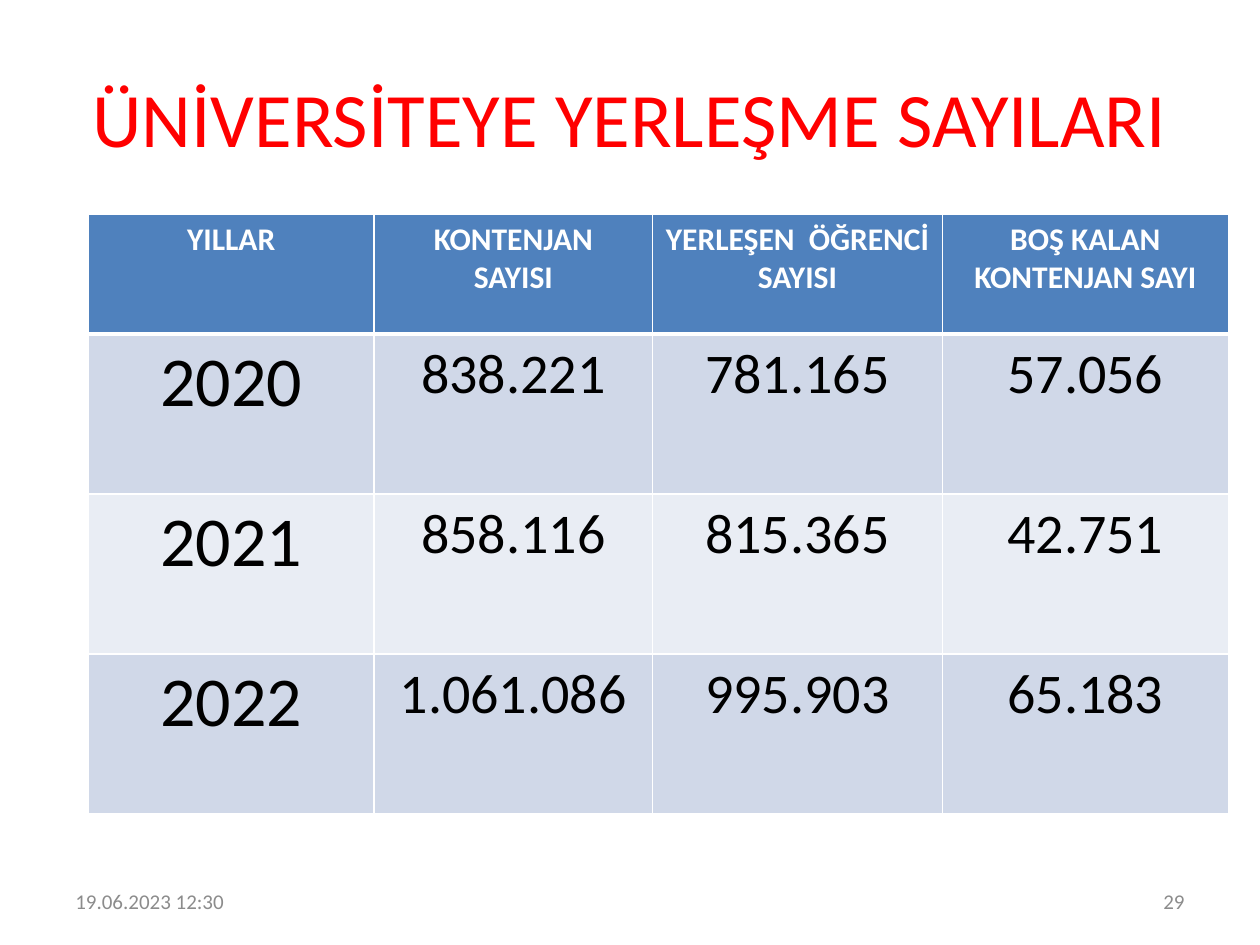
import pptx
import pptx.util
import pptx.dml.color
import pptx.enum.text
import pptx.oxml
import pptx.oxml.ns

Inch = pptx.util.Inches
Align = pptx.enum.text.PP_ALIGN
Anchor = pptx.enum.text.MSO_ANCHOR

WIDE, HIGH = 10, 7.5
FONT = "Calibri"
HUES = {
    "title": "FF0000",
    "head": "4F81BD",
    "odd": "D0D8E8",
    "even": "E9EDF4",
    "line": "FFFFFF",
    "light": "FFFFFF",
    "dark": "000000",
    "foot": "8C8C8C",
}
COLS = [2.27, 2.21, 2.3, 2.27]
ROWS = [0.95, 1.27, 1.27, 1.27]
DATA = [
    ["YILLAR", "KONTENJAN\nSAYISI", "YERLEŞEN  ÖĞRENCİ SAYISI", "BOŞ KALAN KONTENJAN SAYI"],
    ["2020", "838.221", "781.165", "57.056"],
    ["2021", "858.116", "815.365", "42.751"],
    ["2022", "1.061.086", "995.903", "65.183"],
]


def color(name):
    return pptx.dml.color.RGBColor.from_string(HUES[name])


def style(frame, size, hue, align, bold=False):
    for para in frame.paragraphs:
        para.alignment = align
        for run in para.runs:
            run.font.name = FONT
            run.font.size = pptx.util.Pt(size)
            run.font.bold = bold
            run.font.color.rgb = color(hue)


def label(slide, box, text, size, hue, align):
    frame = slide.shapes.add_textbox(*map(Inch, box)).text_frame
    frame.word_wrap = True
    frame.vertical_anchor = Anchor.MIDDLE
    frame.text = text
    style(frame, size, hue, align)


def border(cell, side, width):
    props = cell._tc.get_or_add_tcPr()
    line = pptx.oxml.parse_xml(
        f'<a:{side} {pptx.oxml.ns.nsdecls("a")} w="{pptx.util.Pt(width)}">'
        f'<a:solidFill><a:srgbClr val="{HUES["line"]}"/></a:solidFill></a:{side}>'
    )
    props.append(line)


def paint(cell, text, row, col):
    head = row == 0
    cell.text_frame.text = text
    if head:
        style(cell.text_frame, 18, "light", Align.CENTER, True)
    else:
        style(cell.text_frame, 40 if col == 0 else 32, "dark", Align.CENTER)
    for side in ("lnL", "lnR", "lnT", "lnB"):
        thick = (head and side == "lnB") or (row == 1 and side == "lnT")
        border(cell, side, 3 if thick else 1)
    cell.fill.solid()
    cell.fill.fore_color.rgb = color("head" if head else "odd" if row % 2 else "even")


def grid(slide, left, top):
    box = map(Inch, (left, top, sum(COLS), sum(ROWS)))
    table = slide.shapes.add_table(len(ROWS), len(COLS), *box).table
    for col, width in zip(table.columns, COLS):
        col.width = Inch(width)
    for row, height in zip(table.rows, ROWS):
        row.height = Inch(height)
    for r, line in enumerate(DATA):
        for c, text in enumerate(line):
            paint(table.cell(r, c), text, r, c)


def footer(slide, left, top, width, height):
    part = 2.33
    label(slide, (left, top, part, height), "19.06.2023 12:30", 12, "foot", Align.LEFT)
    end = left + width - part
    label(slide, (end, top, part, height), "29", 12, "foot", Align.RIGHT)


def main():
    deck = pptx.Presentation()
    deck.slide_width, deck.slide_height = Inch(WIDE), Inch(HIGH)
    slide = deck.slides.add_slide(deck.slide_layouts[6])
    edge, span = WIDE * 0.05, WIDE * 0.9
    head = (edge, HIGH * 0.04, span, HIGH / 6)
    label(slide, head, "ÜNİVERSİTEYE YERLEŞME SAYILARI", 44, "title", Align.CENTER)
    grid(slide, WIDE * 0.07, WIDE * 0.17)
    footer(slide, edge, 6.95, span, 0.4)
    deck.save("out.pptx")


if __name__ == "__main__":
    main()
